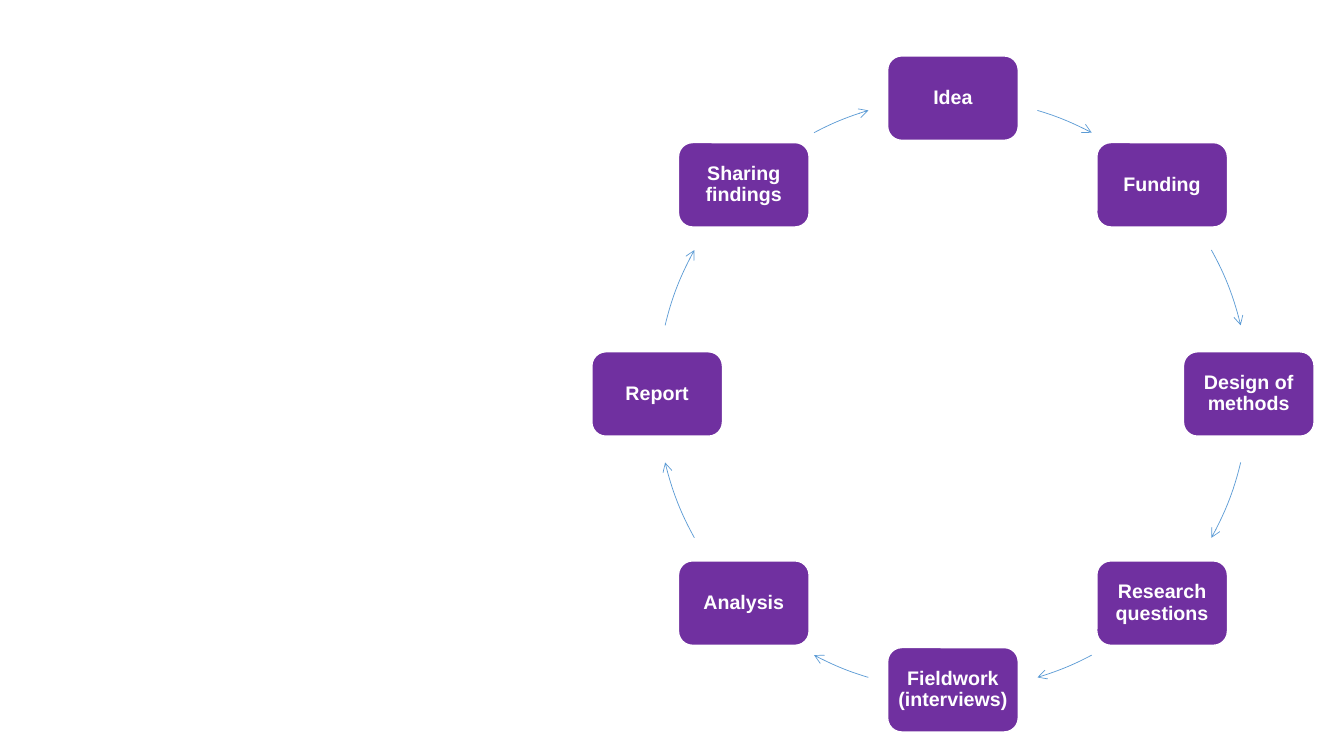
from math import cos, radians, sin

from pptx import Presentation
from pptx.dml.color import RGBColor
from pptx.enum.shapes import MSO_SHAPE as Shape
from pptx.enum.text import MSO_ANCHOR as Anchor, PP_ALIGN as Align
from pptx.oxml.ns import qn
from pptx.util import Pt

STAGES = ["Idea", "Funding", "Design of methods", "Research questions",
          "Fieldwork (interviews)", "Analysis", "Report", "Sharing findings"]

# Cycle geometry in points; angles are degrees clockwise from the top
CENTER_X, CENTER_Y, RADIUS = 680.7, 281.4, 211.3
BOX_WIDTH, BOX_HEIGHT = 93.3, 60.3
ARROW_SPANS = [(16.6, 28), (60.9, 76.6), (103.4, 119.1), (152, 163.4)]


def color(value):
    return RGBColor.from_string(value)


def style_line(shape, line_color, width):
    shape.shadow.inherit = False
    shape.line.color.rgb = color(line_color)
    shape.line.width = Pt(width)


def write_text(shape, text, *, size=14, font="Arial", fill="FFFFFF",
               bold=True, inset=4.2):
    frame = shape.text_frame
    frame.word_wrap = True
    frame.vertical_anchor = Anchor.MIDDLE
    frame.margin_left = frame.margin_right = Pt(inset)
    frame.margin_top = frame.margin_bottom = Pt(inset)
    para = frame.paragraphs[0]
    para.alignment = Align.CENTER
    para.line_spacing = 0.9
    span = para.add_run()
    span.text = text
    span.font.size = Pt(size)
    span.font.name = font
    span.font.bold = bold
    span.font.color.rgb = color(fill)


def add_stage(page, text, angle):
    left = CENTER_X + RADIUS * sin(radians(angle)) - BOX_WIDTH / 2
    top = CENTER_Y - RADIUS * cos(radians(angle)) - BOX_HEIGHT / 2
    box = page.shapes.add_shape(Shape.ROUNDED_RECTANGLE, Pt(left), Pt(top),
                                Pt(BOX_WIDTH), Pt(BOX_HEIGHT))
    box.fill.solid()
    box.fill.fore_color.rgb = color("7030A0")
    style_line(box, "FFFFFF", 1)
    write_text(box, text)


def add_arc_arrow(page, start, end):
    arc = page.shapes.add_shape(Shape.ARC, Pt(CENTER_X - RADIUS),
                                Pt(CENTER_Y - RADIUS),
                                Pt(2 * RADIUS), Pt(2 * RADIUS))
    # Arc angles run from the right; one degree is 0.6 adjustment units
    for index, angle in enumerate((start, end)):
        arc.adjustments[index] = (angle - 90) % 360 * 0.6
    arc.fill.background()
    style_line(arc, "5B9BD5", 0.5)
    line = arc.line._get_or_add_ln()
    head = line.makeelement(qn("a:tailEnd"), {"type": "arrow"})
    line.append(head)


def main():
    deck = Presentation()
    deck.slide_width, deck.slide_height = Pt(960), Pt(540)
    page = deck.slides.add_slide(deck.slide_layouts[6])

    # Research cycle: each stage is followed by its arrow
    step = 360 / len(STAGES)
    for index, stage in enumerate(STAGES):
        add_stage(page, stage, index * step)
        half, position = divmod(index, len(ARROW_SPANS))
        start, end = ARROW_SPANS[position]
        add_arc_arrow(page, start + half * 180, end + half * 180)

    deck.save("out.pptx")


if __name__ == "__main__":
    main()
